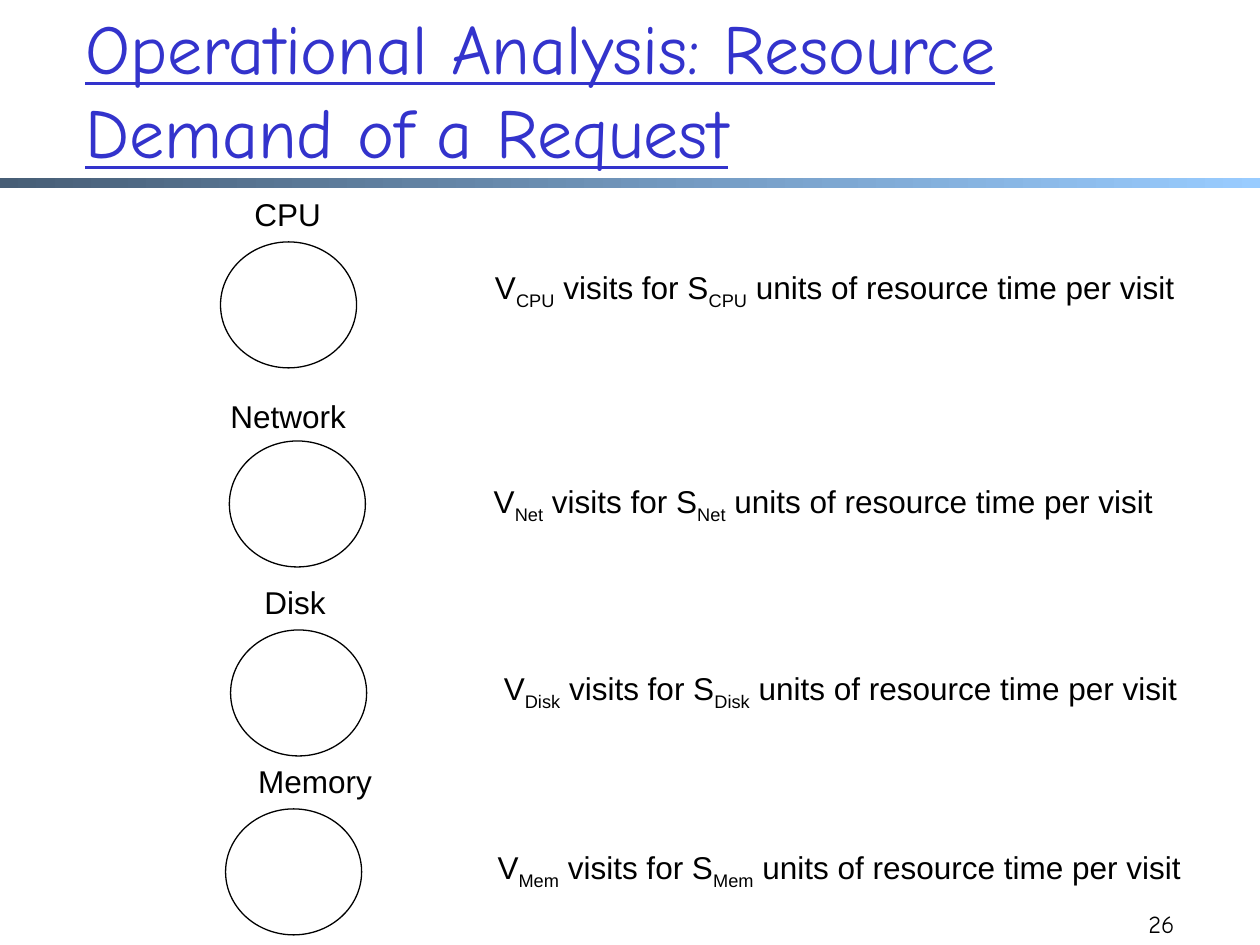
from pptx import Presentation
from pptx.dml.color import RGBColor
from pptx.enum.shapes import MSO_SHAPE
from pptx.enum.text import MSO_ANCHOR, MSO_AUTO_SIZE, PP_ALIGN
from pptx.util import Inches, Pt

RECT, OVAL = MSO_SHAPE.RECTANGLE, MSO_SHAPE.OVAL
MIDDLE, BOTTOM, TOP = MSO_ANCHOR.MIDDLE, MSO_ANCHOR.BOTTOM, MSO_ANCHOR.TOP
LEFT, RIGHT = PP_ALIGN.LEFT, PP_ALIGN.RIGHT
FIT = MSO_AUTO_SIZE.SHAPE_TO_FIT_TEXT

COLORS = {
    "title": "3333CC",
    "text": "000000",
    "paper": "FFFFFF",
    "bar_start": "475E76",
    "bar_end": "99CCFF",
}
BODY, HEADING = "Arial", "Comic Neue"
LABEL_H = 0.4
CIRCLE_W, CIRCLE_H = 1.08, 1

# name, subscript, label (left, top, width), circle (left, top), demand (left, top, width)
RESOURCES = [
    ("CPU", "CPU", (1.92, 1.5, 0.92), (1.75, 1.92), (3.83, 2.08, 5.92)),
    ("Network", "Net", (1.73, 3.1, 1.13), (1.82, 3.5), (3.82, 3.78, 5.69)),
    ("Disk", "Disk", (2, 4.58, 0.69), (1.83, 5), (3.9, 5.26, 5.82)),
    ("Memory", "Mem", (1.95, 6, 1.11), (1.79, 6.42), (3.85, 6.68, 5.91)),
]


def color(name):
    return RGBColor.from_string(COLORS[name])


def add_text(shapes, box, runs, size=18, font=BODY, fill="text",
             align=LEFT, anchor=TOP, wrap=False):
    sp = shapes.add_textbox(*map(Inches, box))
    tf = sp.text_frame
    tf.word_wrap = wrap
    tf.vertical_anchor = anchor
    if not wrap:
        tf.auto_size = FIT
    p = tf.paragraphs[0]
    p.alignment = align
    p.font.size = Pt(size)
    p.font.name = font
    p.font.color.rgb = color(fill)
    for text, subscript in runs:
        r = p.add_run()
        r.text = text
        if subscript:
            r.font._element.set("baseline", "-25000")
    return p


def add_title(s, box):
    p = add_text(s.shapes, box,
                 [("Operational Analysis: Resource Demand of a Request", False)],
                 40, HEADING, "title", anchor=MIDDLE, wrap=True)
    p.font.underline = True


def add_bar(s, box):
    sp = s.shapes.add_shape(RECT, *map(Inches, box))
    sp.shadow.inherit = False
    sp.line.fill.background()
    sp.fill.gradient()
    sp.fill.gradient_angle = 0
    for stop, name in zip(sp.fill.gradient_stops, ("bar_start", "bar_end")):
        stop.color.rgb = color(name)


def add_resource(s, name, label, circle):
    group = s.shapes.add_group_shape()
    add_text(group.shapes, (*label, LABEL_H), [(name, False)])
    sp = group.shapes.add_shape(OVAL, *map(Inches, (*circle, CIRCLE_W, CIRCLE_H)))
    sp.shadow.inherit = False
    sp.fill.solid()
    sp.fill.fore_color.rgb = color("paper")
    sp.line.color.rgb = color("text")
    sp.line.width = Pt(0.75)


def add_demand(s, subscript, box):
    add_text(s.shapes, (*box, LABEL_H), [
        ("V", False),
        (subscript, True),
        (" visits for S", False),
        (subscript, True),
        (" units of resource time per visit", False),
    ])


def add_page_number(s, box):
    add_text(s.shapes, box, [("26", False)], 14, HEADING,
             align=RIGHT, anchor=BOTTOM, wrap=True)


def main():
    prs = Presentation()
    prs.slide_width, prs.slide_height = Inches(10), Inches(7.5)
    s = prs.slides.add_slide(prs.slide_layouts[6])
    add_bar(s, (0, 1.41, 10, 0.08))
    add_title(s, (0.58, 0.08, 8.5, 1.25))
    add_page_number(s, (5.09, 7, 4.33, 0.5))
    for name, subscript, label, circle, demand in RESOURCES:
        add_resource(s, name, label, circle)
        add_demand(s, subscript, demand)
    prs.save("out.pptx")


if __name__ == "__main__":
    main()
